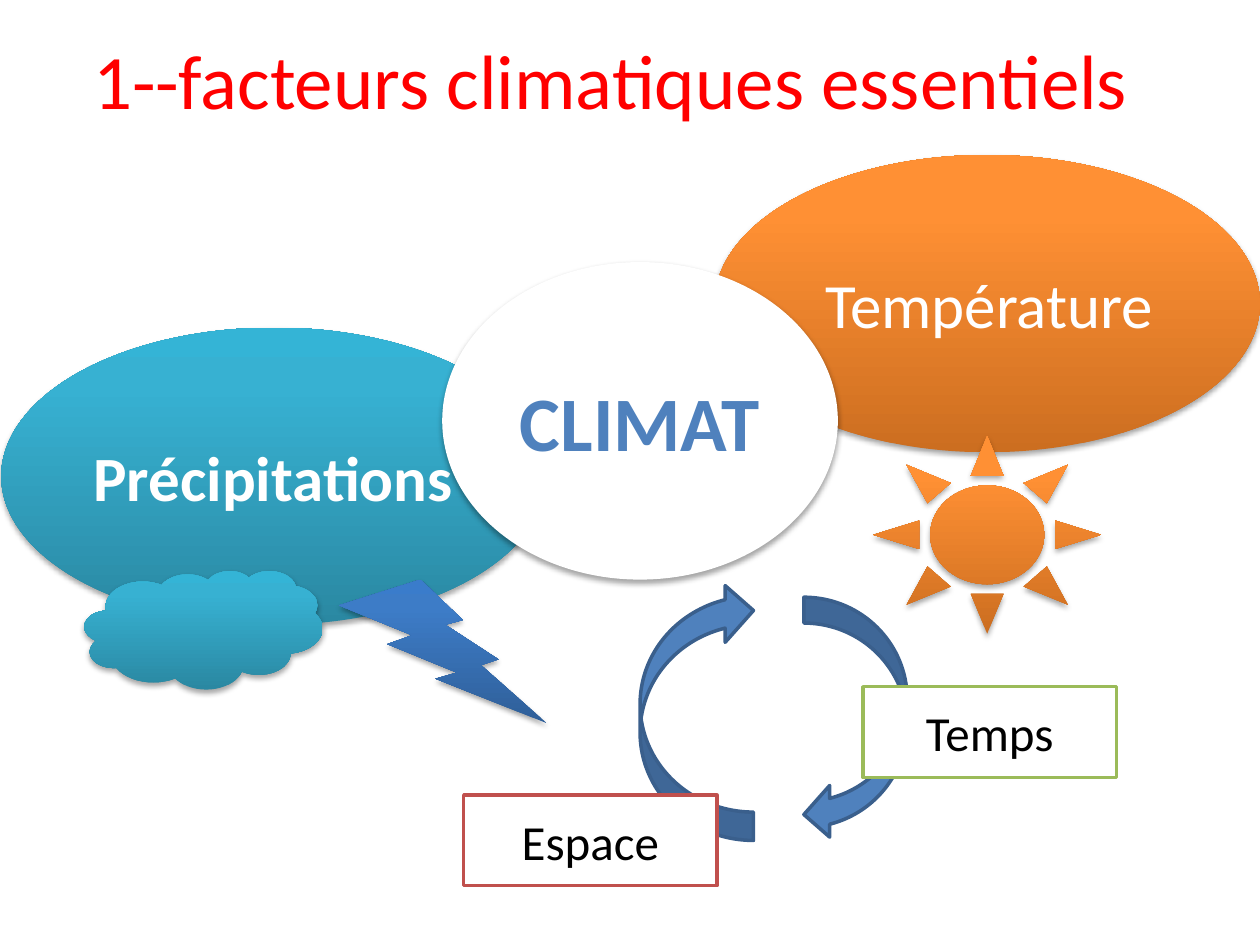
from dataclasses import dataclass
from typing import Optional

from lxml import etree
from pptx import Presentation
from pptx import util as u
from pptx.dml.color import RGBColor
from pptx.enum import shapes, text
from pptx.oxml import parse_xml
from pptx.oxml.ns import nsdecls, qn

COLORS = {
    "title": "FF0000", "white": "FFFFFF", "black": "000000",
    "blue": "4F81BD", "blue_edge": "3A5F8C",
    "space_edge": "C0504D", "time_edge": "9BBB59",
}
# Stops at 0, 80 and 100 %, running from the bottom upwards
GRADIENTS = {
    "water": ("2A88A2", "37B1D2", "34B4D6"),
    "heat": ("CC6E20", "FF9034", "FF9136"),
    "storm": ("2F5F99", "3D7CC7", "3A7CCB"),
}
STOP_POSITIONS = (0, 80, 100)
FONT = "Calibri"
SHAPE = shapes.MSO_SHAPE
ALIGN = text.PP_ALIGN


@dataclass(frozen=True)
class Label:
    words: str
    size: int
    color: str
    bold: bool = False
    align: ALIGN = ALIGN.CENTER


@dataclass(frozen=True)
class Figure:
    """A preset shape; its fill names either a gradient or a plain colour."""
    preset: SHAPE
    box: tuple[float, float, float, float]
    fill: str
    edge: Optional[str] = None
    shadow: bool = False
    rotation: int = 0
    label: Optional[Label] = None


def climate_figure(preset, box, fill, label=None) -> Figure:
    return Figure(preset, box, fill, shadow=True, label=label)


def dimension_box(left: float, top: float, edge: str, words: str) -> Figure:
    return Figure(SHAPE.RECTANGLE, (left, top, 2.01, 0.72), "white", edge,
                  label=Label(words, 28, "black"))


def cycle_arrow(box, rotation: int = 0) -> Figure:
    return Figure(SHAPE.CURVED_LEFT_ARROW, box, "blue", "blue_edge", rotation=rotation)


FIGURES = (
    climate_figure(SHAPE.OVAL, (0.01, 2.6, 4.33, 2.36), "water",
                   Label("Précipitations", 36, "white", True, ALIGN.LEFT)),
    climate_figure(SHAPE.OVAL, (5.67, 1.23, 4.33, 2.36), "heat",
                   Label("Température ", 36, "white", align=ALIGN.RIGHT)),
    climate_figure(SHAPE.SUN, (6.93, 3.46, 1.81, 1.57), "heat"),
    climate_figure(SHAPE.LIGHTNING_BOLT, (2.69, 4.6, 1.65, 1.14), "storm"),
    climate_figure(SHAPE.CLOUD, (0.67, 4.53, 1.89, 0.94), "water"),
    climate_figure(SHAPE.OVAL, (3.51, 2.08, 3.14, 2.52), "white",
                   Label("CLIMAT", 44, "blue", True)),
    cycle_arrow((6.38, 4.74, 0.82, 1.93)),
    cycle_arrow((5.08, 4.62, 0.9, 2.05), rotation=180),
    dimension_box(3.68, 6.31, "space_edge", "Espace"),
    dimension_box(6.85, 5.45, "time_edge", "Temps"),
)


def rgb(name: str) -> RGBColor:
    return RGBColor.from_string(COLORS[name])


def write_label(frame, label: Label) -> None:
    frame.word_wrap = True
    frame.vertical_anchor = text.MSO_ANCHOR.MIDDLE
    paragraph = frame.paragraphs[0]
    paragraph.text = label.words
    paragraph.alignment = label.align
    font = paragraph.runs[0].font
    font.name, font.size, font.bold = FONT, u.Pt(label.size), label.bold
    font.color.rgb = rgb(label.color)


def fill_gradient(shape, stops: tuple[str, ...]) -> None:
    """Replace the two default stops, which python-pptx cannot add to."""
    shape.fill.gradient()
    gradient = shape.element.spPr.find(qn("a:gradFill"))
    stop_list = gradient.find(qn("a:gsLst"))
    for stop in list(stop_list):
        stop_list.remove(stop)
    for position, color in zip(STOP_POSITIONS, stops):
        stop = etree.SubElement(stop_list, qn("a:gs"), pos=str(position * 1000))
        etree.SubElement(stop, qn("a:srgbClr"), val=color)
    gradient.find(qn("a:lin")).set("ang", str(270 * 60000))


def cast_shadow(shape) -> None:
    shape.element.spPr.find(qn("a:effectLst")).append(parse_xml(
        f'<a:outerShdw {nsdecls("a")} blurRad="{u.Pt(3.1)}" dist="{u.Pt(1.8)}" '
        f'dir="{90 * 60000}" rotWithShape="0"><a:srgbClr val="{COLORS["black"]}">'
        '<a:alpha val="35000"/></a:srgbClr></a:outerShdw>'))


def draw_figure(slide, figure: Figure) -> None:
    shape = slide.shapes.add_shape(figure.preset, *map(u.Inches, figure.box))
    shape.rotation = figure.rotation
    shape.shadow.inherit = False
    if figure.fill in GRADIENTS:
        fill_gradient(shape, GRADIENTS[figure.fill])
    else:
        shape.fill.solid()
        shape.fill.fore_color.rgb = rgb(figure.fill)
    if figure.edge:
        shape.line.color.rgb = rgb(figure.edge)
        shape.line.width = u.Pt(2)
    else:
        shape.line.fill.background()
    if figure.shadow:
        cast_shadow(shape)
    if figure.label:
        write_label(shape.text_frame, figure.label)


def main() -> None:
    deck = Presentation()
    deck.slide_width, deck.slide_height = u.Inches(10), u.Inches(7.5)
    slide = deck.slides.add_slide(deck.slide_layouts[6])
    title = slide.shapes.add_textbox(*map(u.Inches, (0.28, 0, 9, 1.25)))
    write_label(title.text_frame, Label(" 1--facteurs climatiques essentiels", 44, "title"))
    for figure in FIGURES:
        draw_figure(slide, figure)
    deck.save("out.pptx")


if __name__ == "__main__":
    main()
